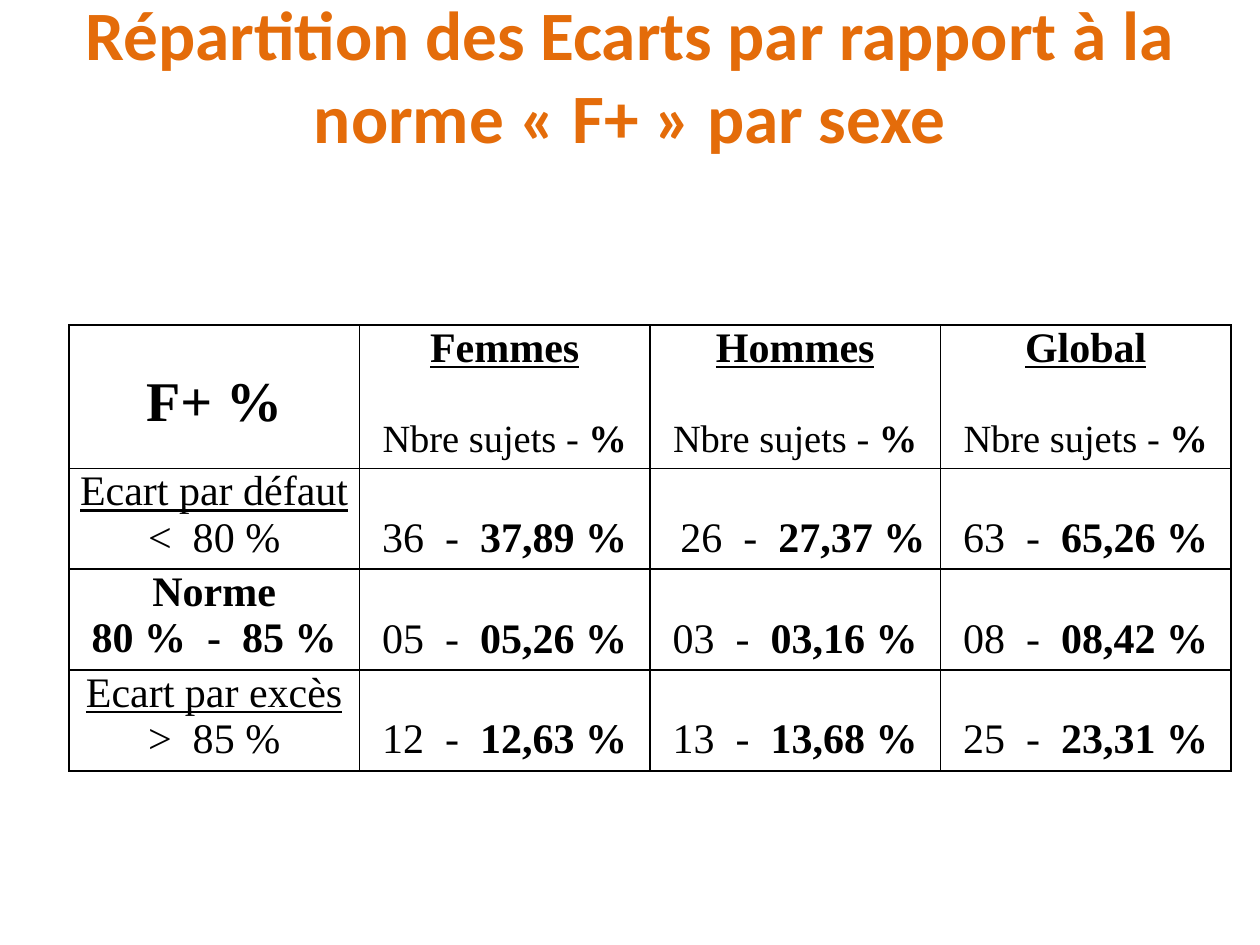
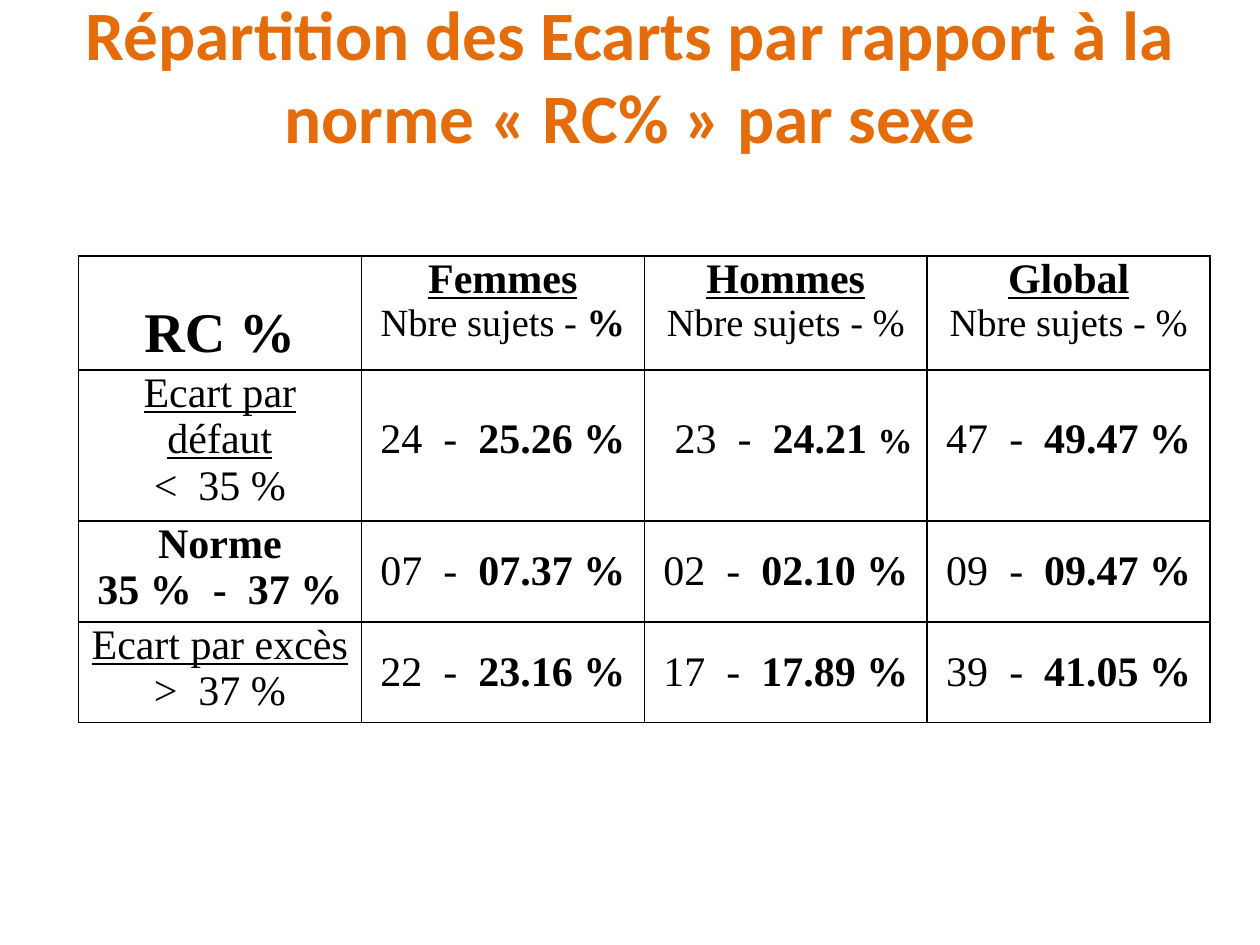
import pptx
import pptx.util
import pptx.dml.color
import pptx.enum.text
import pptx.oxml
import pptx.oxml.ns

Pt = pptx.util.Pt
Align = pptx.enum.text.PP_ALIGN
Anchor = pptx.enum.text.MSO_ANCHOR

HUES = {"title": "E46C0A", "text": "000000", "rule": "000000"}
FACE = {"title": "Calibri", "table": "Times New Roman"}
TITLE = (36, 21.6, 648, 90)
SIZE = 24
LEAD = 1.107  # line height of the table face, in ems
SIDE = 5.4  # side margin of a cell
INDENT = 12


def color(name):
    return pptx.dml.color.RGBColor.from_string(HUES[name])


def title(slide, box, norm):
    shape = slide.shapes.add_textbox(*map(Pt, box))
    frame = shape.text_frame
    frame.word_wrap = True
    frame.vertical_anchor = Anchor.MIDDLE
    frame.margin_bottom = Pt(52)  # lifts the two lines towards the top edge
    para = frame.paragraphs[0]
    para.text = f"Répartition des Ecarts par rapport à la norme {norm} par sexe"
    para.alignment = Align.CENTER
    font = para.font
    font.name, font.size, font.bold = FACE["title"], Pt(39.6), True
    font.color.rgb = color("title")


def border(cell):
    props = cell._tc.get_or_add_tcPr()
    for spot, side in enumerate(("lnL", "lnR", "lnT", "lnB")):
        props.insert(spot, pptx.oxml.parse_xml(
            f'<a:{side} {pptx.oxml.ns.nsdecls("a")} w="12700"><a:solidFill>'
            f'<a:srgbClr val="{HUES["rule"]}"/></a:solidFill></a:{side}>'))


def line(para, runs, size=SIZE, under=False, gap=0):
    """Fill one paragraph with runs of (text, bold) or (text, bold, size)."""
    para.alignment = Align.CENTER
    if gap:
        para.space_before = Pt(gap)
    font = para.font
    font.name, font.size = FACE["table"], Pt(size)
    font.underline = under
    font.color.rgb = color("text")
    if len(runs) == 1:
        font.bold = runs[0][1]
    for text, bold, *own in runs:
        run = para.add_run()
        run.text = text
        if len(runs) > 1:
            run.font.bold = bold
        if own:
            run.font.size = Pt(own[0])


def pair(cell, first, second):
    """Two lines; each is a dict of arguments for line()."""
    line(cell.text_frame.paragraphs[0], **first)
    line(cell.text_frame.add_paragraph(), **second)


def drop(cell, runs, lead, size=SIZE):
    """One line set below a lead of the given type size."""
    cell.margin_top = Pt(lead * LEAD)
    line(cell.text_frame.paragraphs[0], runs, size)


def grid(slide, box, highs, data):
    left, top, wide = box
    count = len(data["heads"]) + 1
    shape = slide.shapes.add_table(len(highs), count, *map(Pt, (left, top, wide, sum(highs))))
    table = shape.table
    table.first_row = table.horz_banding = False
    for col in table.columns:
        col.width = Pt(wide / count)
    for row, high in zip(table.rows, highs):
        row.height = Pt(high)
    for cell in table.iter_cells():
        cell.margin_left = cell.margin_right = Pt(SIDE)
        cell.margin_top = cell.margin_bottom = 0
        cell.fill.background()
        border(cell)

    # Header row
    drop(table.cell(0, 0), [(data["corner"], True)], SIZE, 32)
    for col, (head, unit) in enumerate(data["heads"], 1):
        pair(table.cell(0, col), dict(runs=[(head, True)], under=True),
             dict(runs=unit, size=22, gap=data["gap"]))

    # Label column and values
    for num, (label, span, lead, *vals) in enumerate(data["rows"], 1):
        norm = label == "Norme"
        pair(table.cell(num, 0), dict(runs=[(label, norm)], under=not norm),
             dict(runs=[(span, norm)]))
        for col, (total, *share) in enumerate(vals, 1):
            drop(table.cell(num, col), [(f"{total}  -  ", False), *share], lead)

    # The men's first value stands at the left, indented
    cell = table.cell(1, 2)
    cell.margin_left = Pt(SIDE + INDENT)
    cell.text_frame.paragraphs[0].alignment = Align.LEFT


def rate(total, share):
    return total, (f"{share} %", True)


MIXED = [("Nbre sujets - ", False), ("%", True)]
PLAIN = [("Nbre sujets - %", False)]

FAT = {
    "corner": "F+ %", "gap": SIZE * LEAD,
    "heads": [("Femmes", MIXED), ("Hommes", MIXED), ("Global", MIXED)],
    "rows": [
        ("Ecart par défaut", "<  80 %", 24,
         rate("36", "37,89"), rate("26", "27,37"), rate("63", "65,26")),
        ("Norme", "80 %  -  85 %", 24,
         rate("05", "05,26"), rate("03", "03,16"), rate("08", "08,42")),
        ("Ecart par excès", ">  85 %", 24,
         rate("12", "12,63"), rate("13", "13,68"), rate("25", "23,31")),
    ],
}
RATIO = {
    "corner": "RC %", "gap": 0,
    "heads": [("Femmes", MIXED), ("Hommes", PLAIN), ("Global", PLAIN)],
    "rows": [
        ("Ecart par défaut", "<  35 %", 24, rate("24", "25.26"),
         ("23", ("24.21 ", True), ("%", True, 20)), rate("47", "49.47")),
        ("Norme", "35 %  -  37 %", 14,
         rate("07", "07.37"), rate("02", "02.10"), rate("09", "09.47")),
        ("Ecart par excès", ">  37 %", 14,
         rate("22", "23.16"), rate("17", "17.89"), rate("39", "41.05")),
    ],
}
# Norm, table box (left, top, width), row heights, table data
PAGES = [
    ("« F+ »", (39.4, 185.8, 664), (77.4, 53, 53, 53), FAT),
    ("« RC% »", (44.8, 146.3, 646.8), (62, 79.7, 53, 53), RATIO),
]


def main():
    deck = pptx.Presentation()
    deck.slide_width, deck.slide_height = Pt(720), Pt(540)
    for norm, box, highs, data in PAGES:
        slide = deck.slides.add_slide(deck.slide_layouts[6])
        title(slide, TITLE, norm)
        grid(slide, box, highs, data)
    deck.save("out.pptx")


if __name__ == "__main__":
    main()
